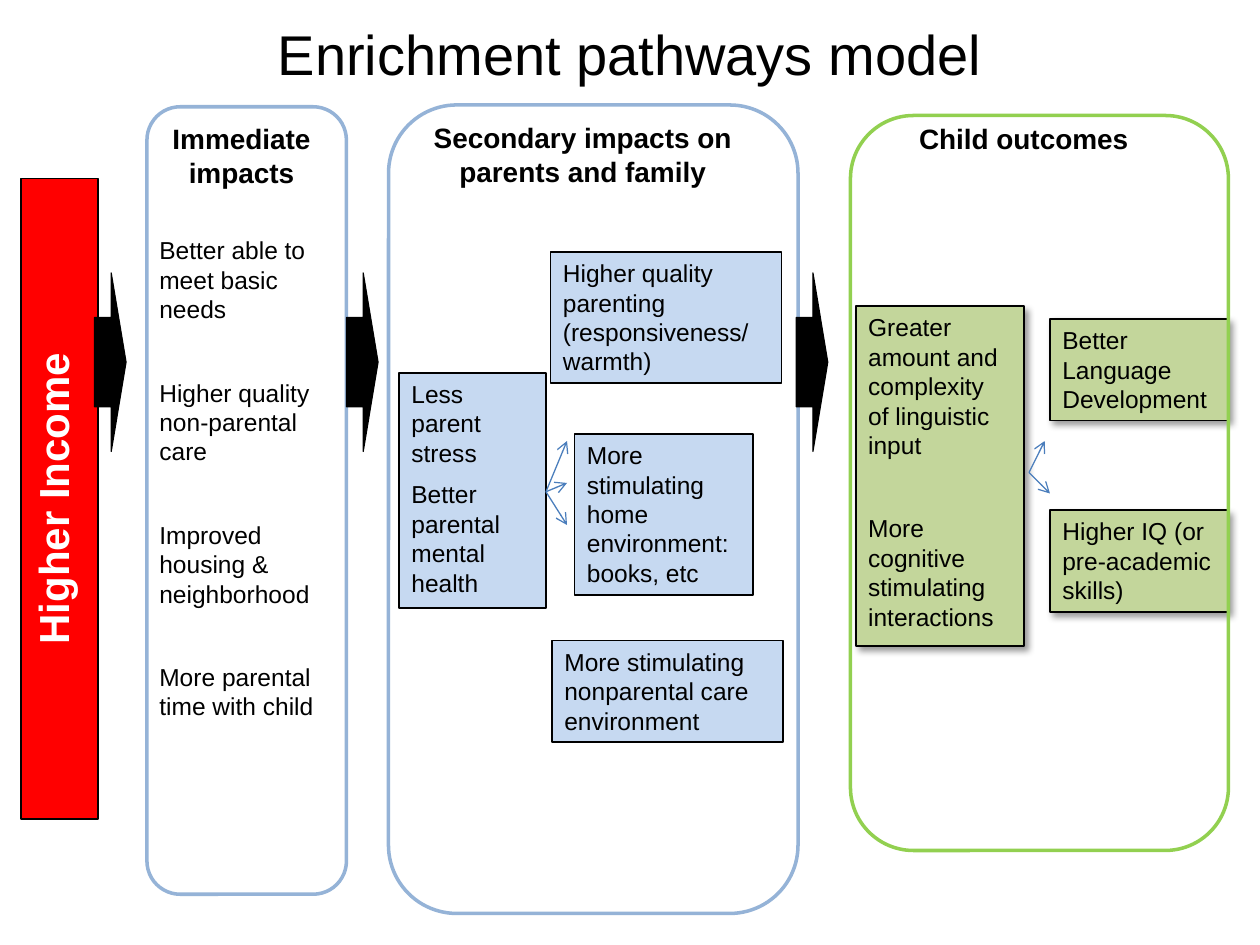
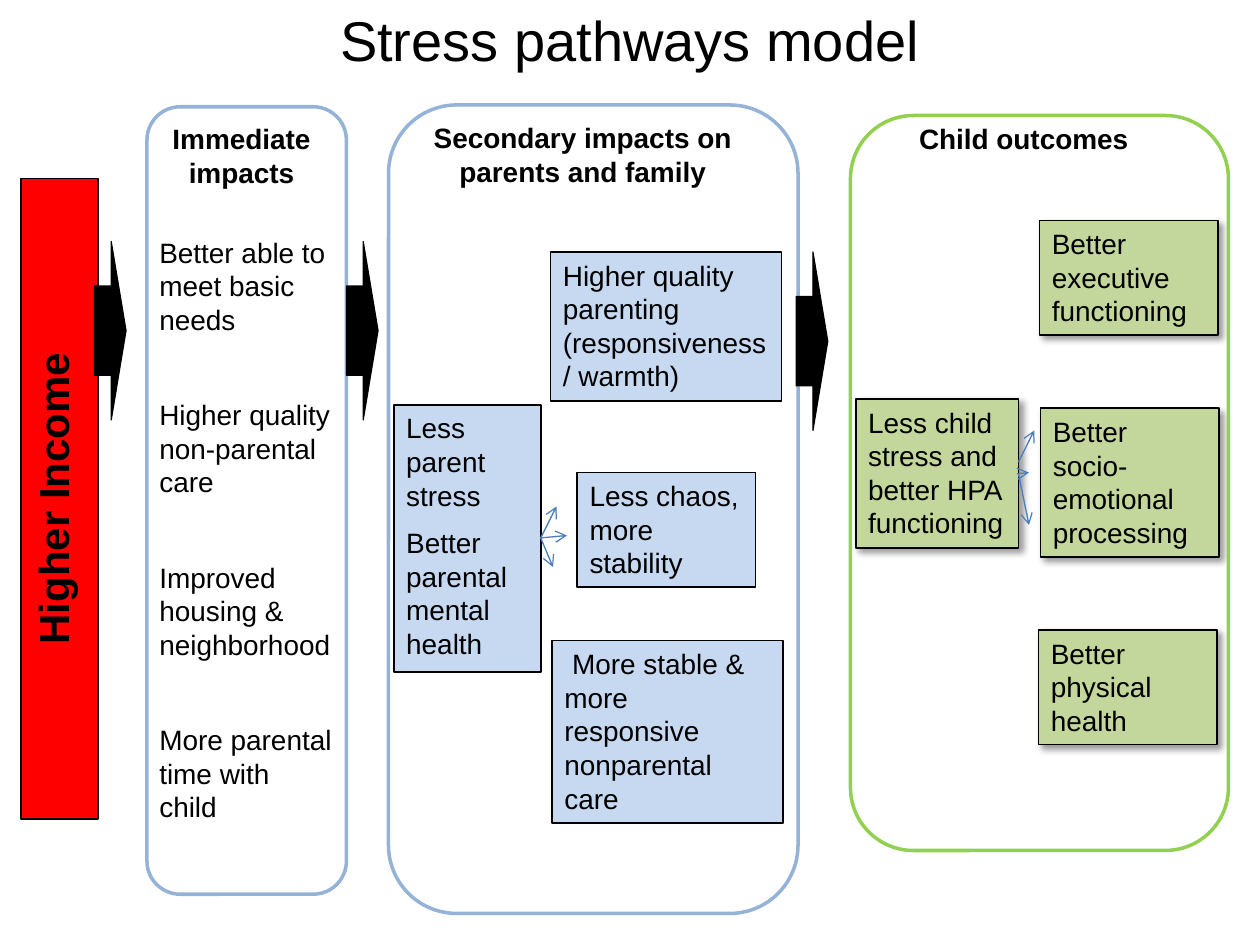
from lxml.etree import SubElement
from pptx import Presentation
from pptx.dml.color import RGBColor
from pptx.enum.shapes import MSO_CONNECTOR, MSO_SHAPE as Shape
from pptx.enum.text import MSO_ANCHOR as Anchor, PP_ALIGN as Align
from pptx.oxml.ns import qn
from pptx.util import Pt

FONT = "Arial"
COLORS = {
    "ink": "000000",
    "white": "FFFFFF",
    "income": "FF0000",
    "family": "C6D9F1",
    "family_edge": "95B3D7",
    "child": "C3D69B",
    "child_edge": "92D050",
    "link": "4B7EBC",
}

# Regions as (left, top, width, height) in points
TITLE_SIZE = (648, 45)
INCOME = (12, 102, 44, 366)
IMMEDIATE = (84, 61, 114, 450)
SECONDARY = (222, 60, 234, 462)
OUTCOMES = (486, 66, 216, 420)
FLOW_LEFTS = (54, 198, 455)

WIDE_GAP = 2.2  # space between separate ideas, in font sizes
NEAR_GAP = 0.5  # space between related ideas

IMMEDIATE_IMPACTS = [
    "Better able to meet basic needs",
    "Higher quality non-parental care",
    "Improved housing & neighborhood",
    "More parental time with child",
]
PARENT_STRESS = ["Less parent stress", "Better parental mental health"]
PARENTING = ["Higher quality parenting (responsiveness/ warmth)"]

# Boxes: (place in the panel, ideas, gap); links: (start, ends) in the panel
MODELS = [
    {
        "title": "Enrichment pathways model",
        "title_top": 8,
        "income_ink": "white",
        "size": 14,
        "flow_tops": (156, 156, 156),
        "secondary": [
            ((6, 153, 84, 134.6), PARENT_STRESS, NEAR_GAP),
            ((92.6, 84, 132, 75), PARENTING, 0),
            ((106.3, 188, 102, 92),
             ["More stimulating home environment: books, etc"], 0),
            ((93.4, 306, 132, 58),
             ["More stimulating nonparental care environment"], 0),
        ],
        "secondary_links": [((90, 221), [(102, 192), (102, 216), (102, 240)])],
        "outcomes": [
            ((3, 109, 96, 194),
             ["Greater amount and complexity of linguistic input",
              "More cognitive stimulating interactions"], WIDE_GAP),
            ((114, 116.3, 102, 58), ["Better Language Development"], 0),
            ((114, 225.6, 102, 58),
             ["Higher IQ (or pre-academic skills)"], 0),
        ],
        "outcome_links": [((102, 204), [(111, 186), (114, 216)])],
    },
    {
        "title": "Stress pathways model",
        "title_top": 0,
        "income_ink": "ink",
        "size": 16,
        "flow_tops": (138, 138, 144),
        "secondary": [
            ((3, 171.3, 84, 152.6), PARENT_STRESS, NEAR_GAP),
            ((92.6, 84, 132, 85), PARENTING, 0),
            ((107.8, 210, 102, 65.5), ["Less chaos, more stability"], 0),
            ((93.4, 306, 132, 104.4),
             [" More stable & more responsive nonparental care"], 0),
        ],
        "secondary_links": [((87, 247.4), [(96, 229.4), (102, 246), (94, 264)])],
        "outcomes": [
            ((3, 162, 93, 85),
             ["Less child stress and better HPA functioning"], 0),
            ((108, 60, 102, 65.5), ["Better executive functioning"], 0),
            ((108.6, 167.3, 102, 85),
             ["Better socio-emotional processing"], 0),
            ((107.4, 294, 102, 65.5), ["Better physical health"], 0),
        ],
        "outcome_links": [
            ((96, 198), [(105, 180)]),
            ((96, 204.7), [(102, 204), (102, 234)]),
        ],
    },
]


def rgb(name):
    return RGBColor.from_string(COLORS[name])


def inside(region, place):
    """Turn a place within a region into a place on the slide."""
    return (region[0] + place[0], region[1] + place[1], *place[2:])


def write(holder, ideas, size, gap=0, ink="ink", bold=False,
          align=Align.LEFT, anchor=Anchor.TOP):
    frame = holder.text_frame
    frame.word_wrap = True
    frame.vertical_anchor = anchor
    for i, idea in enumerate(ideas):
        paragraph = frame.add_paragraph() if i else frame.paragraphs[0]
        paragraph.text = idea
        paragraph.alignment = align
        paragraph.space_before = Pt(gap * size if i else 0)
        font = paragraph.font
        font.name, font.size, font.bold = FONT, Pt(size), bold
        font.color.rgb = rgb(ink)


def add_label(slide, box, ideas, size, **style):
    label = slide.shapes.add_textbox(*map(Pt, box))
    write(label, ideas, size, **style)


def add_figure(slide, kind, box, fill=None, edge="ink", weight=1):
    figure = slide.shapes.add_shape(kind, *map(Pt, box))
    figure.shadow.inherit = False
    if fill:
        figure.fill.solid()
        figure.fill.fore_color.rgb = rgb(fill)
    else:
        figure.fill.background()
    figure.line.color.rgb = rgb(edge)
    figure.line.width = Pt(weight)
    return figure


def add_soft_shadow(figure):
    effects = figure._element.spPr.find(qn("a:effectLst"))
    shadow = SubElement(effects, qn("a:outerShdw"), blurRad=str(Pt(4)),
                        dist=str(Pt(3)), dir="2700000", rotWithShape="0")
    tint = SubElement(shadow, qn("a:srgbClr"), val=COLORS["ink"])
    SubElement(tint, qn("a:alpha"), val="40000")


def add_links(slide, region, links):
    for start, ends in links:
        for end in ends:
            points = inside(region, start) + inside(region, end)
            link = slide.shapes.add_connector(
                MSO_CONNECTOR.STRAIGHT, *map(Pt, points))
            link.line.color.rgb = rgb("link")
            link.line.width = Pt(0.75)
            SubElement(link.line._get_or_add_ln(), qn("a:tailEnd"), type="arrow")
            SubElement(link._element.spPr, qn("a:effectLst"))


def add_heading(slide, region, place, text):
    add_label(slide, inside(region, place), [text], 16,
              bold=True, align=Align.CENTER)


def add_boxes(slide, region, boxes, size, fill, shaded=False):
    for place, ideas, gap in boxes:
        box = add_figure(slide, Shape.RECTANGLE, inside(region, place), fill)
        if shaded:
            add_soft_shadow(box)
        write(box, ideas, size, gap=gap)


def add_panel(slide, region, edge):
    add_figure(slide, Shape.ROUNDED_RECTANGLE, region, edge=edge, weight=2)


def add_income(slide, region, ink):
    bar = add_figure(slide, Shape.RECTANGLE, region, "income")
    write(bar, ["Higher Income"], 24, ink=ink, bold=True, align=Align.CENTER)
    bar.text_frame._txBody.bodyPr.set("vert", "vert270")


def add_immediate(slide, region, size):
    add_heading(slide, region, (-6, 5, 120, 46), "Immediate impacts")
    add_label(slide, inside(region, (0, 70, 114, 356)), IMMEDIATE_IMPACTS,
              size, gap=WIDE_GAP)
    add_panel(slide, region, "family_edge")


def add_secondary(slide, region, model):
    add_heading(slide, region, (6, 5.5, 210, 46),
                "Secondary impacts on parents and family")
    add_boxes(slide, region, model["secondary"], model["size"], "family")
    add_panel(slide, region, "family_edge")
    add_links(slide, region, model["secondary_links"])


def add_outcomes(slide, region, model):
    add_heading(slide, region, (-18, 0, 234, 27), "Child outcomes")
    add_boxes(slide, region, model["outcomes"], model["size"], "child",
              shaded=True)
    add_panel(slide, region, "child_edge")
    add_links(slide, region, model["outcome_links"])


def add_flow(slide, tops):
    for left, top in zip(FLOW_LEFTS, tops):
        arrow = add_figure(slide, Shape.RIGHT_ARROW, (left, top, 18, 102),
                           "ink", weight=0.75)
        arrow.adjustments[1] = 0.47


def add_model(deck, model):
    slide = deck.slides.add_slide(deck.slide_layouts[6])
    add_label(slide, (36, model["title_top"], *TITLE_SIZE), [model["title"]],
              32, align=Align.CENTER, anchor=Anchor.MIDDLE)
    add_income(slide, INCOME, model["income_ink"])
    add_immediate(slide, IMMEDIATE, model["size"])
    add_secondary(slide, SECONDARY, model)
    add_outcomes(slide, OUTCOMES, model)
    add_flow(slide, model["flow_tops"])


def main():
    deck = Presentation()
    deck.slide_width, deck.slide_height = Pt(720), Pt(540)
    for model in MODELS:
        add_model(deck, model)
    deck.save("out.pptx")


if __name__ == "__main__":
    main()
